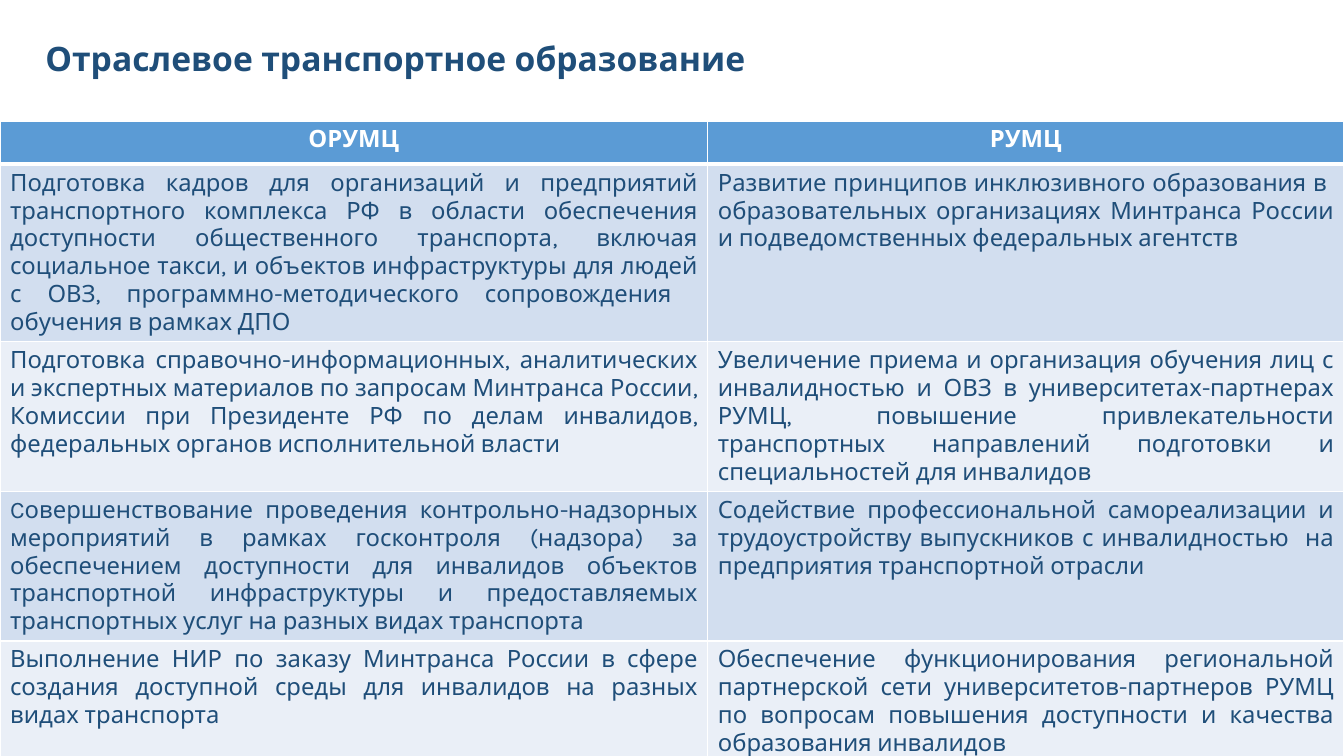
import pptx
import pptx.util
import pptx.dml.color
import pptx.enum.text
import pptx.oxml
import pptx.oxml.ns

Inches, Pt = pptx.util.Inches, pptx.util.Pt
ALIGN = pptx.enum.text.PP_ALIGN
WIDE, HIGH = 13.33, 7.5
FONT = "Karla"
NAVY, BLUE, WHITE = "1F4E79", "5B9BD5", "FFFFFF"
BANDS = ["EAEFF7", "D2DEEF"]
COLS = [7.02, 6.31]
ROWS = [0.43, 1.52, 1.1, 1.47, 0.44]

GOALS = [
    ("ОРУМЦ", "РУМЦ"),
    ("Подготовка кадров для организаций и предприятий транспортного комплекса РФ "
     "в области обеспечения доступности общественного транспорта, включая социальное "
     "такси, и объектов инфраструктуры для людей с ОВЗ, программно-методического "
     "сопровождения  обучения в рамках ДПО",
     "Развитие принципов инклюзивного образования в  образовательных организациях "
     "Минтранса России и подведомственных федеральных агентств"),
    ("Подготовка справочно-информационных, аналитических и экспертных материалов "
     "по запросам Минтранса России, Комиссии при Президенте РФ по делам инвалидов, "
     "федеральных органов исполнительной власти",
     "Увеличение приема и организация обучения лиц с инвалидностью и ОВЗ "
     "в университетах-партнерах РУМЦ, повышение привлекательности транспортных "
     "направлений подготовки и специальностей для инвалидов"),
    ("Cовершенствование проведения контрольно-надзорных мероприятий в рамках "
     "госконтроля (надзора) за обеспечением доступности для инвалидов объектов "
     "транспортной инфраструктуры и предоставляемых транспортных услуг на разных "
     "видах транспорта",
     "Содействие профессиональной самореализации и трудоустройству выпускников "
     "с инвалидностью  на предприятия транспортной отрасли"),
    ("Выполнение НИР по заказу Минтранса России в сфере создания доступной среды "
     "для инвалидов на разных видах транспорта",
     "Обеспечение функционирования региональной партнерской сети "
     "университетов-партнеров РУМЦ по вопросам повышения доступности и качества "
     "образования инвалидов"),
]


def color(code):
    return pptx.dml.color.RGBColor.from_string(code)


def style(para, size, code, bold, align):
    para.alignment = align
    for run in para.runs:
        font = run.font
        font.name, font.size, font.bold = FONT, Pt(size), bold
        font.color.rgb = color(code)


def border(cell, base):
    """Draw white cell edges; base is the width of the bottom one in points."""
    props = cell._tc.get_or_add_tcPr()
    widths = {"L": 1, "R": 1, "T": 1, "B": base}
    for spot, (side, width) in enumerate(widths.items()):
        line = pptx.oxml.parse_xml(
            f'<a:ln{side} {pptx.oxml.ns.nsdecls("a")} w="{Pt(width)}">'
            f'<a:solidFill><a:srgbClr val="{WHITE}"/></a:solidFill></a:ln{side}>')
        props.insert(spot, line)


def add_title(slide, box, text):
    title = slide.shapes.title
    title.left, title.top, title.width, title.height = map(Inches, box)
    frame = title.text_frame
    frame.text = text
    frame.word_wrap = True
    frame.auto_size = pptx.enum.text.MSO_AUTO_SIZE.NONE
    frame.vertical_anchor = pptx.enum.text.MSO_ANCHOR.TOP
    para = frame.paragraphs[0]
    para.line_spacing = 1.15
    style(para, 24, NAVY, True, ALIGN.LEFT)


def add_goals(slide, box):
    frame = slide.shapes.add_table(len(ROWS), len(COLS), *map(Inches, box))
    table = frame.table
    for col, width in zip(table.columns, COLS):
        col.width = Inches(width)
    for row, height in zip(table.rows, ROWS):
        row.height = Inches(height)
    frame.height = Inches(box[3])
    for r, texts in enumerate(GOALS):
        head = r == 0
        for c, text in enumerate(texts):
            cell = table.cell(r, c)
            cell.text_frame.text = text
            cell.fill.solid()
            cell.fill.fore_color.rgb = color(BLUE if head else BANDS[r % 2])
            border(cell, 3 if r == 0 else 1)
            style(cell.text_frame.paragraphs[0], 17, WHITE if head else NAVY,
                  head, ALIGN.CENTER if head else ALIGN.JUSTIFY)


def main():
    deck = pptx.Presentation()
    deck.slide_width, deck.slide_height = Inches(WIDE), Inches(HIGH)
    slide = deck.slides.add_slide(deck.slide_layouts[5])
    add_goals(slide, (0, HIGH * 0.16, WIDE, 6.5))
    add_title(slide, (0.35, 0.27, 8.34, 0.52), "Отраслевое транспортное образование")
    deck.save("out.pptx")


if __name__ == "__main__":
    main()
